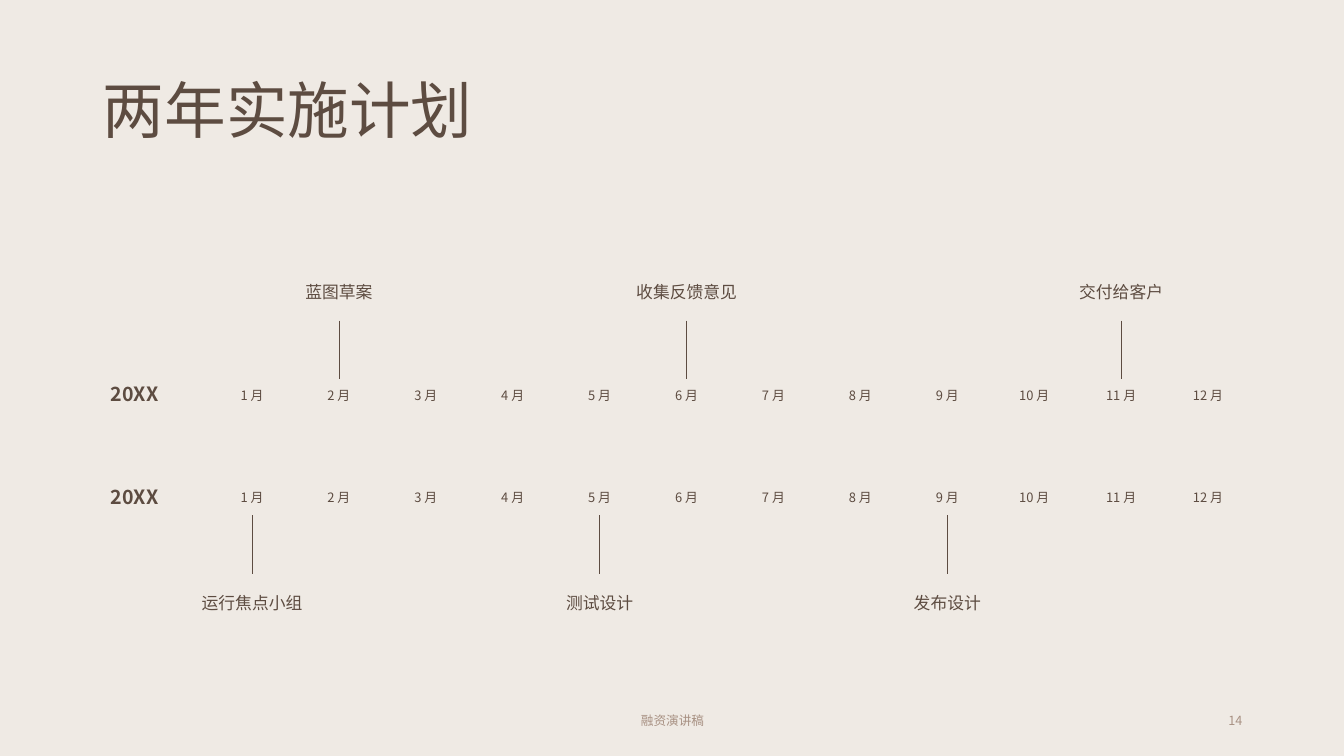
from lxml import etree
from pptx import Presentation
from pptx.dml.color import RGBColor
from pptx.enum.shapes import MSO_CONNECTOR
from pptx.enum.text import MSO_ANCHOR, PP_ALIGN
from pptx.oxml.ns import qn
from pptx.util import Inches, Pt

LEFT, CENTER, RIGHT = PP_ALIGN.LEFT, PP_ALIGN.CENTER, PP_ALIGN.RIGHT
TOP, MIDDLE, BOTTOM = MSO_ANCHOR.TOP, MSO_ANCHOR.MIDDLE, MSO_ANCHOR.BOTTOM
STRAIGHT = MSO_CONNECTOR.STRAIGHT

FONT = "Noto Sans CJK SC"
BACKGROUND, BROWN, TAN = "EFEAE4", "5D4C41", "A89183"

FIRST_MONTH_CENTER = 2.5
MONTH_PITCH = 0.862
MONTH_WIDTH = 0.7
LABEL_WIDTH = 2.25

YEARS = [
    {"year_top": 3.67, "month_top": 3.83, "line_top": 3.18, "label_top": 2.43,
     "anchor": BOTTOM,
     "milestones": {2: "蓝图草案", 6: "收集反馈意见", 11: "交付给客户"}},
    {"year_top": 4.69, "month_top": 4.84, "line_top": 5.11, "label_top": 5.73,
     "anchor": TOP,
     "milestones": {1: "运行焦点小组", 5: "测试设计", 9: "发布设计"}},
]


def color(value):
    """Turn a hex string into a colour."""
    return RGBColor.from_string(value)


def write_text(shape, text, size, align, anchor, spacing, fill=BROWN, bold=False):
    """Put one formatted paragraph into a shape."""
    frame = shape.text_frame
    frame.text = text
    frame.word_wrap = True
    frame.vertical_anchor = anchor
    paragraph = frame.paragraphs[0]
    paragraph.alignment = align
    paragraph.line_spacing = spacing
    paragraph.space_before = Pt(0)
    font = paragraph.runs[0].font
    font.size = Pt(size)
    font.bold = bold
    font.color.rgb = color(fill)
    font.name = FONT
    etree.SubElement(font._element, qn("a:ea"), typeface=FONT)


def add_text(slide, box, text, size, align=CENTER, anchor=MIDDLE, spacing=1.0,
             fill=BROWN, bold=False):
    """Add a text box at left, top, width, height in inches."""
    shape = slide.shapes.add_textbox(*map(Inches, box))
    write_text(shape, text, size, align, anchor, spacing, fill, bold)


def add_title(slide, text):
    """Place and fill the title placeholder."""
    title = slide.shapes.title
    title.left, title.top = Inches(0.92), Inches(0.4)
    title.width, title.height = Inches(11.5), Inches(1.45)
    write_text(title, text, 44, LEFT, MIDDLE, 0.9)


def add_marker(slide, x, top):
    """Draw the thin vertical line between a month and its milestone."""
    line = slide.shapes.add_connector(
        STRAIGHT, Inches(x), Inches(top), Inches(x), Inches(top + 0.58))
    line.line.color.rgb = color(BROWN)
    line.line.width = Pt(0.5)
    etree.SubElement(line._element.spPr, qn("a:effectLst"))


def month_center(month):
    """Return the horizontal centre of a month in inches."""
    return FIRST_MONTH_CENTER + (month - 1) * MONTH_PITCH


def add_year(slide, year):
    """Add one year's heading, months and milestones."""
    add_text(slide, (1, year["year_top"], 0.8, 0.5), "20XX", 14, LEFT,
             spacing=0.9, bold=True)
    for month in range(1, 13):
        left = month_center(month) - MONTH_WIDTH / 2
        add_text(slide, (left, year["month_top"], MONTH_WIDTH, 0.22),
                 f"{month} 月", 9.2, anchor=TOP, spacing=0.8)
    for month, milestone in year["milestones"].items():
        center = month_center(month)
        add_marker(slide, center, year["line_top"])
        add_text(slide, (center - LABEL_WIDTH / 2, year["label_top"], LABEL_WIDTH, 0.61),
                 milestone, 12, anchor=year["anchor"], spacing=1.5)


def main():
    """Build the two-year plan slide and save it."""
    presentation = Presentation()
    presentation.slide_width = Inches(13.33)
    presentation.slide_height = Inches(7.5)
    slide = presentation.slides.add_slide(presentation.slide_layouts[5])
    slide.background.fill.solid()
    slide.background.fill.fore_color.rgb = color(BACKGROUND)
    add_title(slide, "两年实施计划")
    for year in YEARS:
        add_year(slide, year)
    add_text(slide, (4.42, 6.95, 4.5, 0.4), "融资演讲稿", 9, fill=TAN)
    add_text(slide, (9.42, 6.95, 3, 0.4), "14", 9, RIGHT, fill=TAN)
    presentation.save("out.pptx")


if __name__ == "__main__":
    main()
